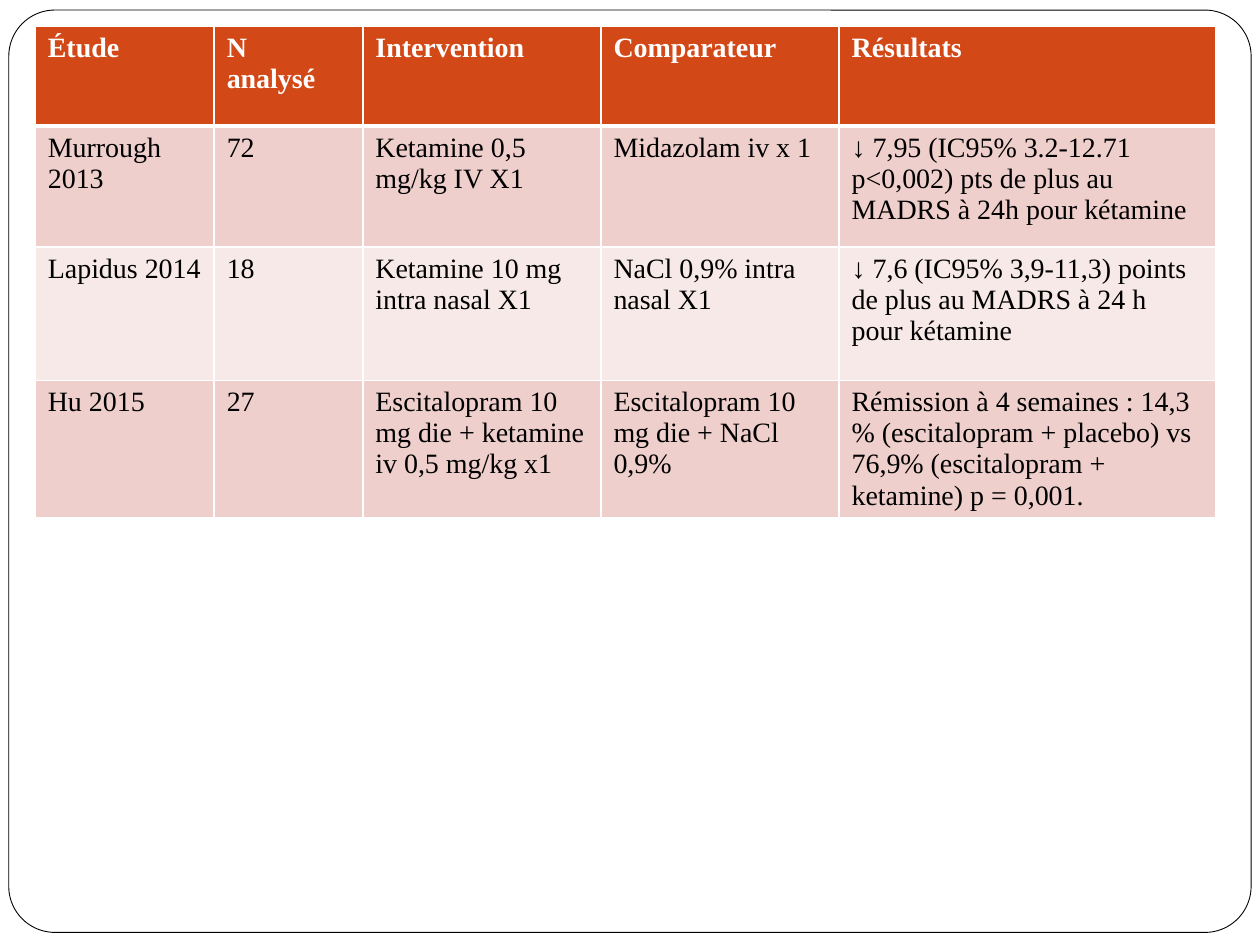
from dataclasses import dataclass

from lxml.etree import SubElement
from pptx import Presentation
from pptx.dml.color import RGBColor
from pptx.enum.shapes import MSO_SHAPE
from pptx.oxml.ns import qn
from pptx.util import Inches, Pt


@dataclass(frozen=True)
class Theme:
    white: str = "FFFFFF"
    ink: str = "000000"
    head: str = "D34817"
    bands: tuple = ("EFCFCC", "F7E9E8")
    font: str = "Times New Roman"
    sign: str = "Arial"
    size: int = 16
    thin: int = 1
    thick: int = 3


theme = Theme()


def rgb(code):
    return RGBColor.from_string(code)


def edge(cell, side, width):
    """Draw one white border; call before the cell's fill is set."""
    line = SubElement(cell._tc.get_or_add_tcPr(), qn(f"a:ln{side}"), w=str(Pt(width)))
    fill = SubElement(line, qn("a:solidFill"))
    SubElement(fill, qn("a:srgbClr"), val=theme.white)


# Each cell is a list of paragraphs
rows = [
    [["Étude"], ["N", "analysé"], ["Intervention"], ["Comparateur"], ["Résultats"]],
    [["Murrough 2013"], ["72"], ["Ketamine 0,5 mg/kg IV X1"], ["Midazolam iv x 1"],
     ["↓ 7,95 (IC95% 3.2-12.71 p<0,002) pts de plus au MADRS à 24h pour kétamine"]],
    [["Lapidus 2014"], ["18"], ["Ketamine 10 mg intra nasal X1"],
     ["NaCl 0,9% intra nasal X1"],
     ["↓ 7,6 (IC95% 3,9-11,3) points de plus au MADRS à 24 h pour kétamine"]],
    [["Hu 2015"], ["27"], ["Escitalopram 10 mg die + ketamine iv 0,5 mg/kg x1"],
     ["Escitalopram 10 mg die + NaCl 0,9%"],
     ["Rémission à 4 semaines : 14,3 % (escitalopram + placebo) vs 76,9% "
      "(escitalopram + ketamine) p = 0,001."]],
]
widths = [1.42, 1.18, 1.89, 1.89, 2.99]
heights = [0.79, 0.96, 1.06, 0.72]

deck = Presentation()
deck.slide_width, deck.slide_height = Inches(10), Inches(7.5)
slide = deck.slides.add_slide(deck.slide_layouts[6])

# Rounded frame
frame = slide.shapes.add_shape(MSO_SHAPE.ROUNDED_RECTANGLE, Inches(0.07), Inches(0.08),
                               Inches(9.86), Inches(7.32))
frame.adjustments[0] = 0.05
frame.shadow.inherit = False
frame.fill.solid()
frame.fill.fore_color.rgb = rgb(theme.white)
frame.line.color.rgb = rgb(theme.ink)
frame.line.width = Pt(0.5)

# Table of studies
table = slide.shapes.add_table(len(rows), len(widths), Inches(0.28), Inches(0.21),
                               Inches(sum(widths)), Inches(sum(heights))).table
for col, width in zip(table.columns, widths):
    col.width = Inches(width)
for row, height in zip(table.rows, heights):
    row.height = Inches(height)

for r, row in enumerate(rows):
    head = r == 0
    back = theme.head if head else theme.bands[(r - 1) % 2]
    for c, paras in enumerate(row):
        cell = table.cell(r, c)
        for side in "LRTB":
            heavy = (r, side) in ((0, "B"), (1, "T"))
            edge(cell, side, theme.thick if heavy else theme.thin)
        cell.fill.solid()
        cell.fill.fore_color.rgb = rgb(back)
        frame = cell.text_frame
        for i, text in enumerate(paras):
            para = frame.add_paragraph() if i else frame.paragraphs[0]
            mark, arrow, rest = text.rpartition("↓")
            for part, font in ((arrow, theme.sign), (rest, theme.font)):
                if part:
                    run = para.add_run()
                    run.text = part
                    run.font.name = font
                    run.font.size = Pt(theme.size)
                    run.font.bold = head
                    run.font.color.rgb = rgb(theme.white if head else theme.ink)

deck.save("out.pptx")
